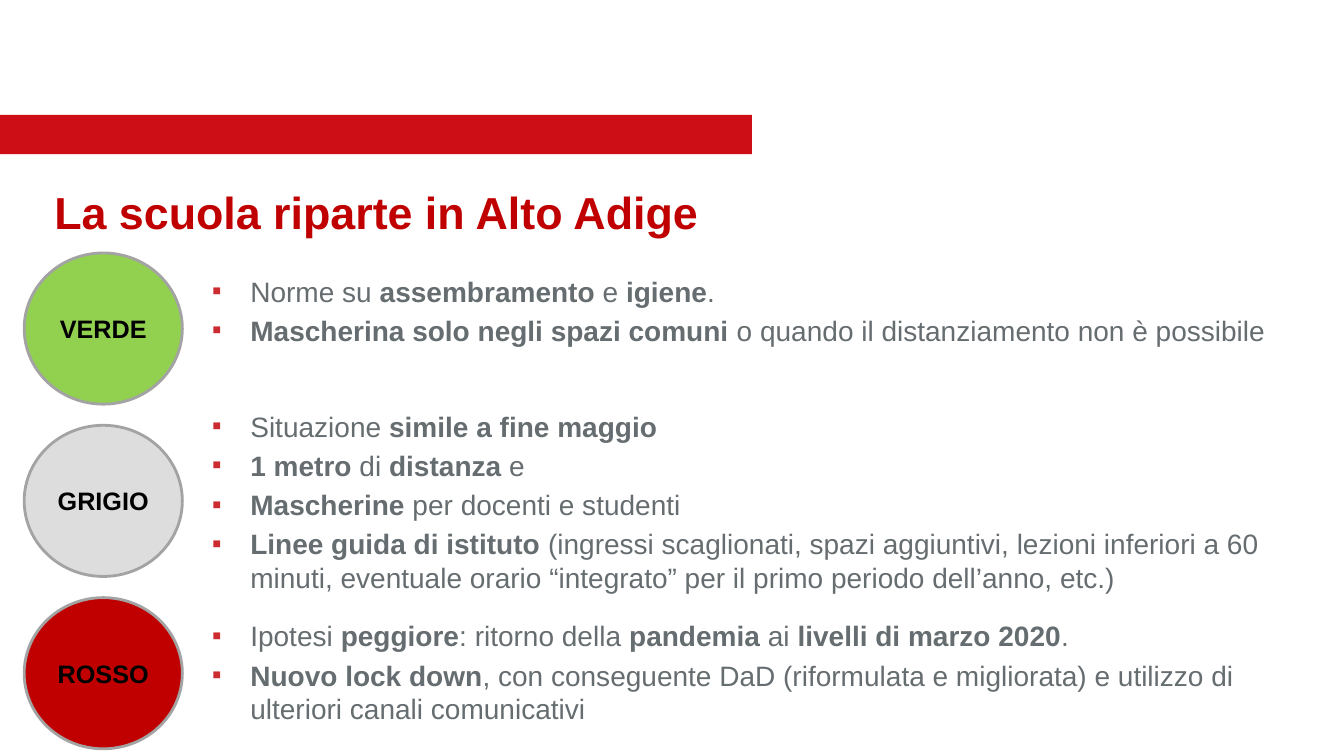
from lxml import etree
from pptx import Presentation
from pptx.dml.color import RGBColor
from pptx.enum.shapes import MSO_SHAPE
from pptx.enum.text import MSO_ANCHOR, PP_ALIGN
from pptx.oxml.ns import qn
from pptx.util import Pt

RECT, OVAL = MSO_SHAPE.RECTANGLE, MSO_SHAPE.OVAL
MIDDLE, CENTER = MSO_ANCHOR.MIDDLE, PP_ALIGN.CENTER

BAR_RED = RGBColor(0xCD, 0x0E, 0x16)
DARK_RED = RGBColor(0xC0, 0x00, 0x00)
BULLET_RED = RGBColor(0xCC, 0x2C, 0x30)
GREEN = RGBColor(0x92, 0xD0, 0x50)
LIGHT_GREY = RGBColor(0xDD, 0xDD, 0xDD)
LINE_GREY = RGBColor(0xA3, 0xA3, 0xA3)
TEXT_GREY = RGBColor(0x66, 0x6D, 0x70)
BLACK = RGBColor(0x00, 0x00, 0x00)

# Label, fill, top of the text box, bullets with *bold* parts
SCENARIOS = [
    ("VERDE", GREEN, 192.2, [
        "Norme su *assembramento* e *igiene*.",
        "*Mascherina solo negli spazi comuni *o quando il distanziamento non è possibile",
    ]),
    ("GRIGIO", LIGHT_GREY, 288.7, [
        "Situazione *simile a fine maggio*",
        "*1 metro *di *distanza* e",
        "*Mascherine *per docenti e studenti",
        "*Linee guida di istituto *(ingressi scaglionati, spazi aggiuntivi, lezioni inferiori "
        "a 60 minuti, eventuale orario “integrato” per il primo periodo dell’anno, etc.)",
    ]),
    ("ROSSO", DARK_RED, 438.5, [
        "Ipotesi *peggiore*: ritorno della *pandemia* ai *livelli di marzo 2020*.",
        "*Nuovo lock down*, con conseguente DaD (riformulata e migliorata) e utilizzo di "
        "ulteriori canali comunicativi",
    ]),
]
CIRCLE_TOP, CIRCLE_STEP = 180.7, 123.1


class SlideBuilder:
    font = "Arial"
    indent = Pt(27)

    def __init__(self, s):
        self.s = s

    def run(self, p, text, size, color, bold):
        r = p.add_run()
        r.text = text
        f = r.font
        f.name, f.size, f.bold = self.font, Pt(size), bold
        f.color.rgb = color

    def shape(self, kind, x, y, w, h, fill, line=None):
        sp = self.s.shapes.add_shape(kind, Pt(x), Pt(y), Pt(w), Pt(h))
        sp.shadow.inherit = False
        sp.fill.solid()
        sp.fill.fore_color.rgb = fill
        if line is None:
            sp.line.fill.background()
        else:
            sp.line.color.rgb = line
            sp.line.width = Pt(2)
        return sp

    def circle(self, y, label, fill):
        tf = self.shape(OVAL, 17.3, y, 113, 108, fill, LINE_GREY).text_frame
        tf.vertical_anchor = MIDDLE
        p = tf.paragraphs[0]
        p.alignment = CENTER
        self.run(p, label, 18, BLACK, True)

    def text_frame(self, x, y, w, h):
        tf = self.s.shapes.add_textbox(Pt(x), Pt(y), Pt(w), Pt(h)).text_frame
        tf.word_wrap = True
        return tf

    def title(self, text):
        tf = self.text_frame(31.7, 128.2, 646.6, 70.6)
        self.run(tf.paragraphs[0], text, 32, DARK_RED, True)

    def add_bullet(self, p):
        pPr = p._p.get_or_add_pPr()
        pPr.set("marL", str(self.indent))
        pPr.set("indent", str(-self.indent))
        color = etree.SubElement(pPr, qn("a:buClr"))
        etree.SubElement(color, qn("a:srgbClr"), val=str(BULLET_RED))
        etree.SubElement(pPr, qn("a:buSzPct"), val="50000")
        etree.SubElement(pPr, qn("a:buFont"), typeface=self.font)
        etree.SubElement(pPr, qn("a:buChar"), char="■")

    def bullets(self, y, h, items):
        tf = self.text_frame(144.7, y, 786.2, h)
        for i, item in enumerate(items):
            p = tf.add_paragraph() if i else tf.paragraphs[0]
            self.add_bullet(p)
            p.line_spacing = Pt(24)
            if i:
                p.space_before = Pt(4)
            for j, part in enumerate(item.split("*")):
                if part:
                    self.run(p, part, 20, TEXT_GREY, j % 2 == 1)


def main():
    prs = Presentation()
    prs.slide_width, prs.slide_height = Pt(960), Pt(540)
    b = SlideBuilder(prs.slides.add_slide(prs.slide_layouts[6]))

    # Header bar and title
    b.shape(RECT, -7.2, 82.1, 544.3, 28.1, BAR_RED)
    b.title("La scuola riparte in Alto Adige")

    # One circle and one bullet list per scenario
    heights = [60.5, 143.3, 85]
    for i, (label, fill, top, items) in enumerate(SCENARIOS):
        b.circle(CIRCLE_TOP + i * CIRCLE_STEP, label, fill)
        b.bullets(top, heights[i], items)

    prs.save("out.pptx")


if __name__ == "__main__":
    main()
